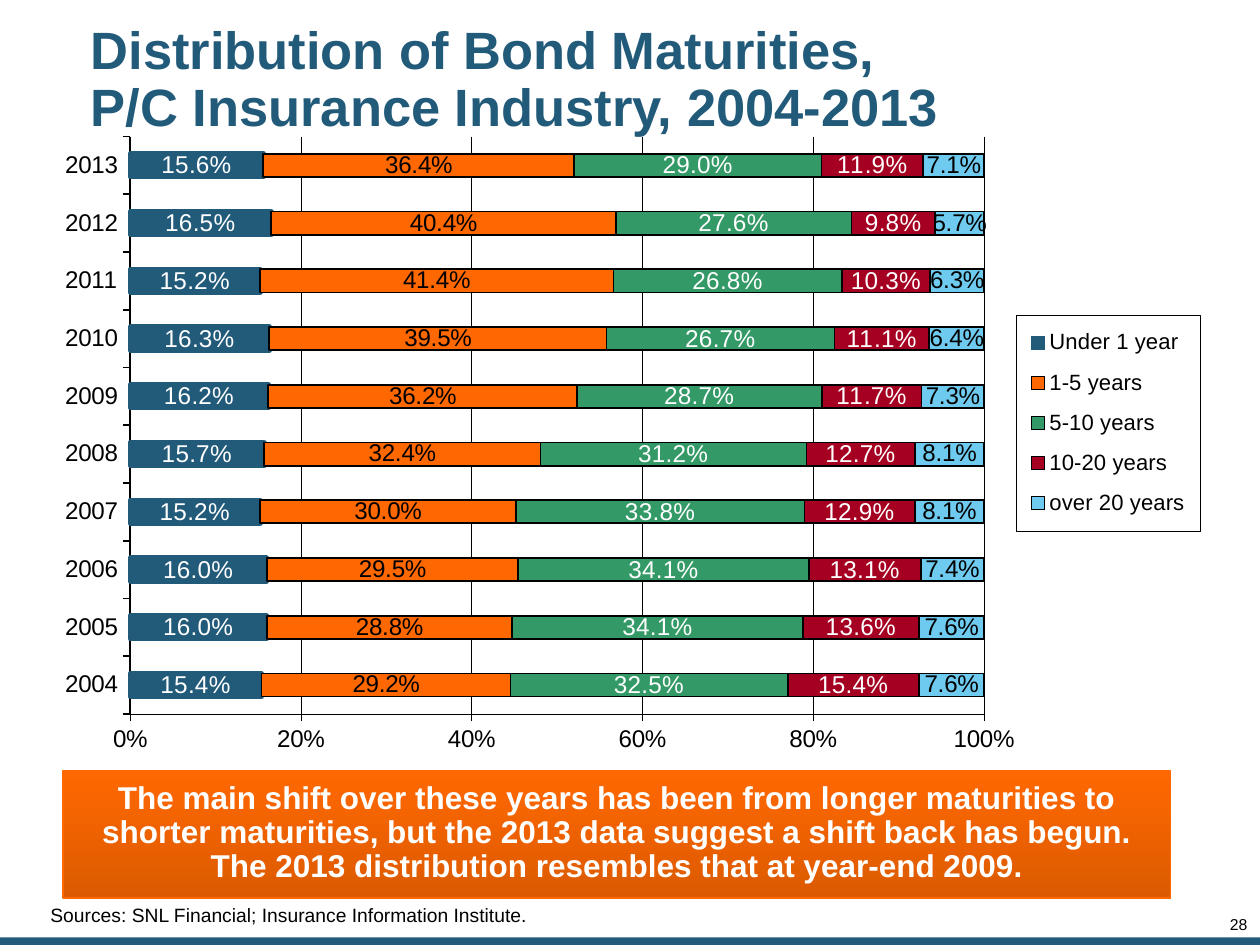
from lxml import etree
from pptx import Presentation
from pptx.chart.data import CategoryChartData
from pptx.dml.color import RGBColor
from pptx.enum.chart import XL_CHART_TYPE as ChartType, XL_LABEL_POSITION as LabelPos
from pptx.enum.chart import XL_LEGEND_POSITION as LegendPos, XL_TICK_MARK as Tick
from pptx.enum.shapes import MSO_SHAPE as Shape
from pptx.enum.text import MSO_ANCHOR as Anchor, MSO_AUTO_SIZE as AutoSize, PP_ALIGN as Align
from pptx.oxml import parse_xml
from pptx.oxml.ns import nsdecls, qn
from pptx.util import Inches, Pt

NAVY, ORANGE, GREEN, RED, SKY = "225A7A", "FF6801", "339966", "A50021", "6FCAEF"
BLACK, WHITE = "000000", "FFFFFF"


def style_font(font, size, color, bold=False):
    font.name = "Arial"
    font.size = Pt(size)
    font.bold = bold
    font.color.rgb = RGBColor.from_string(color)


def manual_layout(x, y, w, h, inner=False):
    layout = parse_xml(f"<c:layout {nsdecls('c')}><c:manualLayout/></c:layout>")
    settings = [("layoutTarget", "inner")] if inner else []
    settings += [("xMode", "edge"), ("yMode", "edge"), ("x", x), ("y", y), ("w", w), ("h", h)]
    for tag, value in settings:
        etree.SubElement(layout[0], qn(f"c:{tag}")).set("val", str(value))
    return layout


prs = Presentation()
prs.slide_width, prs.slide_height = Inches(10), Inches(7.5)
slide = prs.slides.add_slide(prs.slide_layouts[5])

strip = slide.shapes.add_shape(Shape.RECTANGLE, Inches(0), Inches(7.44), Inches(10), Inches(0.06))
strip.shadow.inherit = False
strip.fill.solid()
strip.fill.fore_color.rgb = RGBColor.from_string(NAVY)
strip.line.fill.background()

title = slide.shapes.title
title.left, title.top, title.width, title.height = Inches(0.67), Inches(0.17), Inches(7.73), Inches(0.94)

years = [str(year) for year in range(2004, 2014)]
maturities = [
    ("Under 1 year", NAVY, WHITE, [0.154, 0.16, 0.16, 0.152, 0.157, 0.162, 0.163, 0.152, 0.165, 0.156]),
    ("1-5 years", ORANGE, BLACK, [0.292, 0.288, 0.295, 0.3, 0.324, 0.362, 0.395, 0.414, 0.404, 0.364]),
    ("5-10 years", GREEN, WHITE, [0.325, 0.341, 0.341, 0.338, 0.312, 0.287, 0.267, 0.268, 0.276, 0.29]),
    ("10-20 years", RED, WHITE, [0.154, 0.136, 0.131, 0.129, 0.127, 0.117, 0.111, 0.103, 0.098, 0.119]),
    ("over 20 years", SKY, BLACK, [0.076, 0.076, 0.074, 0.081, 0.081, 0.073, 0.064, 0.063, 0.057, 0.071]),
]
bond_data = CategoryChartData(number_format="0.0%")
bond_data.categories = years
for name, _, _, shares in maturities:
    bond_data.add_series(name, shares)
chart = slide.shapes.add_chart(ChartType.BAR_STACKED_100, Inches(0.44), Inches(0.87),
                               Inches(9.12), Inches(5.78), bond_data).chart
chart.has_title = False
style_font(chart.font, 13.8, BLACK)

bars = chart.plots[0]
bars.gap_width, bars.overlap, bars.vary_by_categories = 150, 100, False
for series, (_, color, label_color, _) in zip(bars.series, maturities):
    series.format.fill.solid()
    series.format.fill.fore_color.rgb = RGBColor.from_string(color)
    outline, width = (NAVY, 2.95) if color == NAVY else (BLACK, 0.98)
    series.format.line.color.rgb = RGBColor.from_string(outline)
    series.format.line.width = Pt(width)
    labels = series.data_labels
    labels.show_value = True
    labels.number_format, labels.number_format_is_linked = "0.0%", False
    labels.position = LabelPos.CENTER
    style_font(labels.font, 13.9 if label_color == WHITE else 13.8, label_color)

share_axis = chart.value_axis
share_axis.minimum_scale, share_axis.maximum_scale, share_axis.major_unit = 0, 1, 0.2
share_axis.tick_labels.number_format = "0%"
share_axis.tick_labels.number_format_is_linked = False
share_axis.has_major_gridlines = True
share_axis.major_gridlines.format.line.color.rgb = RGBColor.from_string(BLACK)
share_axis.major_gridlines.format.line.width = Pt(0.25)
for axis, width in ((chart.category_axis, 0.98), (share_axis, 0.25)):
    axis.major_tick_mark, axis.minor_tick_mark = Tick.OUTSIDE, Tick.NONE
    axis.format.line.color.rgb = RGBColor.from_string(BLACK)
    axis.format.line.width = Pt(width)
    style_font(axis.tick_labels.font, 13.8, BLACK)

chart.has_legend = True
legend = chart.legend
legend.position = LegendPos.RIGHT
legend.include_in_layout = False
style_font(legend.font, 12.6, BLACK)

plot_area = chart.element.find(".//" + qn("c:plotArea"))
legend_part = chart.element.find(".//" + qn("c:legend"))
for part in (plot_area, legend_part):
    for old_layout in part.findall(qn("c:layout")):
        part.remove(old_layout)
plot_area.insert(0, manual_layout(0.065, 0.037, 0.743, 0.793, inner=True))
legend_part.find(qn("c:legendPos")).addnext(manual_layout(0.836, 0.282, 0.16, 0.297))
legend_part.find(qn("c:overlay")).addnext(parse_xml(
    f'<c:spPr {nsdecls("c", "a")}><a:solidFill><a:srgbClr val="{WHITE}"/></a:solidFill>'
    f'<a:ln w="3175"><a:solidFill><a:srgbClr val="{BLACK}"/></a:solidFill></a:ln></c:spPr>'))

sources = slide.shapes.add_textbox(Inches(0), Inches(6.99), Inches(8.88), Inches(0.51))
page_number = slide.shapes.add_textbox(Inches(9.41), Inches(7.28), Inches(0.49), Inches(0.13))

takeaway = slide.shapes.add_shape(Shape.RECTANGLE, Inches(0.5), Inches(6.12), Inches(8.79), Inches(1.01))
takeaway.shadow.inherit = False
takeaway.fill.gradient()
takeaway.fill.gradient_angle = 270
for stop, color, position in zip(takeaway.fill.gradient_stops, (ORANGE, "DC5A01"), (0, 1)):
    stop.color.rgb = RGBColor.from_string(color)
    stop.position = position
takeaway.line.color.rgb = RGBColor.from_string(ORANGE)
takeaway.line.width = Pt(1)

texts = [
    (title, ["Distribution of Bond Maturities,", "P/C Insurance Industry, 2004-2013"],
     30, NAVY, True, Align.LEFT, Anchor.MIDDLE, 0.9, (0.05, 0.05, 0.05, 0.05)),
    (sources, ["Sources: SNL Financial; Insurance Information Institute."],
     11, BLACK, False, Align.LEFT, Anchor.BOTTOM, 0.85, (0.4, 0, 0, 0.15)),
    (page_number, ["28"], 9, BLACK, False, Align.RIGHT, Anchor.TOP, 0.85, (0, 0, 0, 0)),
    (takeaway, ["The main shift over these years has been from longer maturities to shorter maturities, "
                "but the 2013 data suggest a shift back has begun. "
                "The 2013 distribution resembles that at year-end 2009."],
     18, WHITE, True, Align.CENTER, Anchor.MIDDLE, 0.9, (0.1, 0.05, 0.1, 0.07)),
]
for holder, lines, size, color, bold, align, anchor, spacing, insets in texts:
    frame = holder.text_frame
    frame.word_wrap, frame.auto_size, frame.vertical_anchor = True, AutoSize.NONE, anchor
    frame.margin_left, frame.margin_top, frame.margin_right, frame.margin_bottom = map(Inches, insets)
    paragraph = frame.paragraphs[0]
    paragraph.alignment, paragraph.line_spacing = align, spacing
    for index, line in enumerate(lines):
        if index:
            paragraph.add_line_break()
        run = paragraph.add_run()
        run.text = line
        style_font(run.font, size, color, bold)

prs.save("out.pptx")
